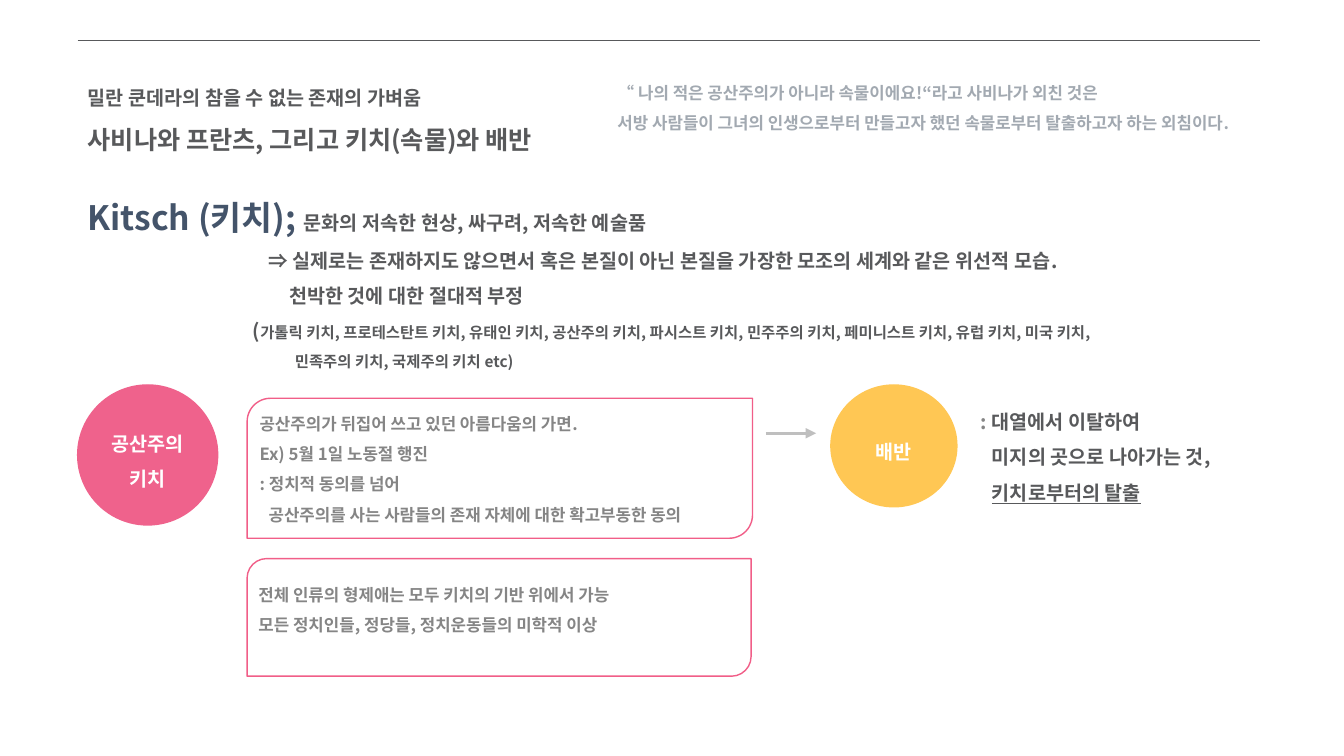
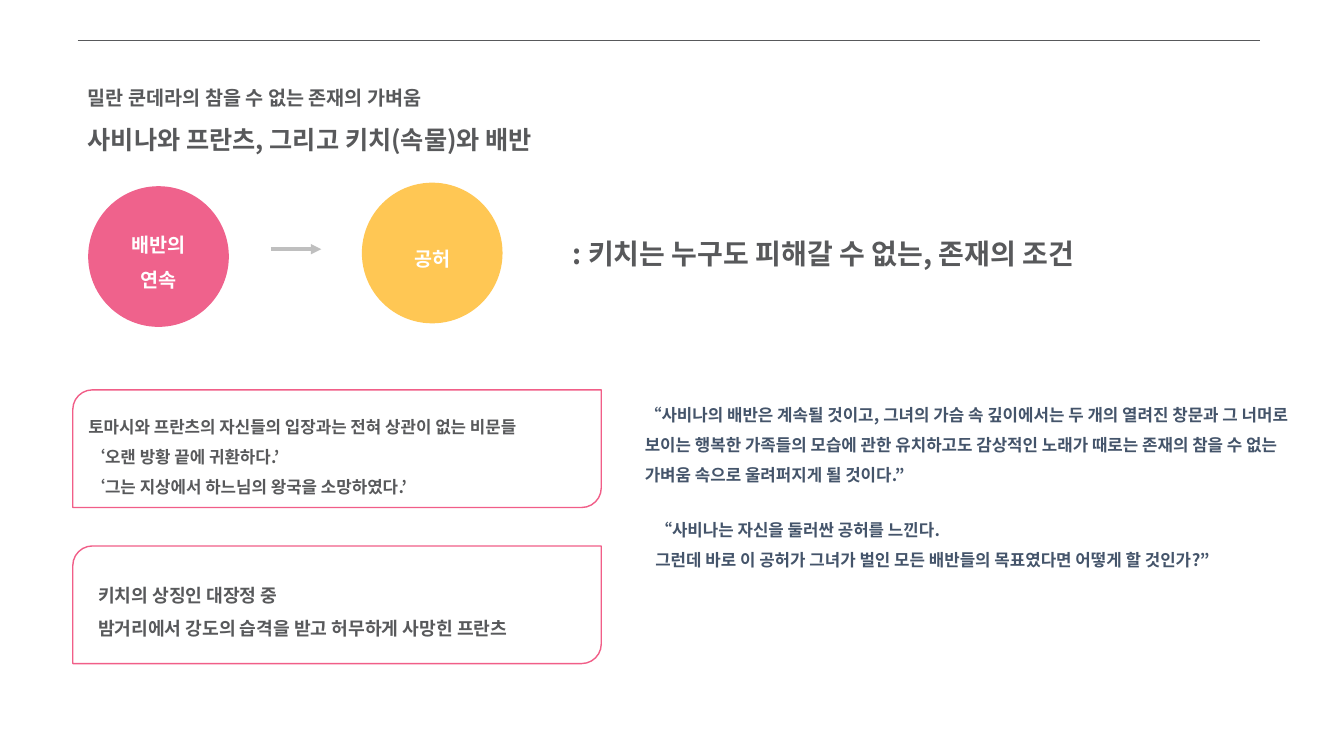
from dataclasses import dataclass

from lxml.etree import SubElement
from pptx import Presentation
from pptx.dml.color import RGBColor
from pptx.enum.shapes import MSO_CONNECTOR as CONN, MSO_SHAPE as SHAPE
from pptx.enum.text import MSO_ANCHOR as ANCHOR, MSO_AUTO_SIZE as AUTO, PP_ALIGN as ALIGN
from pptx.oxml.ns import qn
from pptx.util import Pt


@dataclass(frozen=True)
class Theme:
    font: str = "Noto Sans CJK KR"
    ink: str = "58595B"
    navy: str = "44546A"
    grey: str = "858585"
    pale: str = "A2A9B1"
    arrow: str = "BFBFBF"
    pink: str = "EF628C"
    outline: str = "F15E88"
    yellow: str = "FFC754"
    white: str = "FFFFFF"
    term: int = 24
    claim: int = 20
    title: int = 18
    body: int = 14
    panel: int = 13
    small: int = 12
    tiny: int = 11
    spacing: float = 1.5


T = Theme()

TITLE = [
    "밀란 쿤데라의 참을 수 없는 존재의 가벼움",
    (0, ("사비나와 프란츠, 그리고 키치(속물)와 배반", {"size": T.title})),
]

SLIDES = [
    {
        "texts": [
            ((55.5, 122.5, 888, 146), T.body, T.ink, [
                (0, ("Kitsch (키치); ", {"size": T.term, "color": T.navy}),
                 "문화의 저속한 현상, 싸구려, 저속한 예술품"),
                (129, "⇒ 실제로는 존재하지도 않으면서 혹은 본질이 아닌 본질을 가장한 모조의 세계와 같은 위선적 모습."),
                (144, "천박한 것에 대한 절대적 부정"),
                (118, "(",
                 ("가톨릭 키치, 프로테스탄트 키치, 유태인 키치, 공산주의 키치, 파시스트 키치, "
                  "민주주의 키치, 페미니스트 키치, 유럽 키치, 미국 키치,", {"size": T.tiny})),
                (148, ("민족주의 키치, 국제주의 키치 etc)", {"size": T.tiny})),
            ]),
            ((434, 48, 512, 51), T.small, T.pale, [
                "“ 나의 적은 공산주의가 아니라 속물이에요!“라고 사비나가 외친 것은",
                "서방 사람들이 그녀의 인생으로부터 만들고자 했던 속물로부터 탈출하고자 하는 외침이다.",
            ]),
            ((693.5, 281, 235, 101), T.body, T.ink, [
                (0, (": ", {"color": T.grey}), "대열에서 이탈하여"),
                (8, "미지의 곳으로 나아가는 것,"),
                (8, ("키치로부터의 탈출", {"underline": True})),
            ]),
        ],
        "circles": [
            ((55.5, 275, 100, 100), T.pink, "공산주의 키치"),
            ((593.5, 275, 90, 87), T.yellow, "배반"),
        ],
        "arrow": (547, 309.5),
        "panels": [
            ((176.5, 284.5, 361, 100), 4, -3, T.small, T.grey, [
                "공산주의가 뒤집어 쓰고 있던 아름다움의 가면.",
                "Ex) 5월 1일 노동절 행진",
                ": 정치적 동의를 넘어",
                (6.5, "공산주의를 사는 사람들의 존재 자체에 대한 확고부동한 동의"),
            ]),
            ((176.5, 399, 360, 84), 4, -9, T.small, T.grey, [
                "전체 인류의 형제애는 모두 키치의 기반 위에서 가능",
                "모든 정치인들, 정당들, 정치운동들의 미학적 이상",
            ]),
        ],
    },
    {
        "texts": [
            ((461, 360.5, 490, 51), T.small, T.navy, [
                "“사비나는 자신을 둘러싼 공허를 느낀다.",
                "그런데 바로 이 공허가 그녀가 벌인 모든 배반들의 목표였다면 어떻게 할 것인가?”",
            ]),
            ((402, 153.5, 418, 39), T.claim, T.ink, [
                ": 키치는 누구도 피해갈 수 없는, 존재의 조건",
            ]),
            ((453.5, 278, 477.5, 73), T.small, T.navy, [
                "“사비나의 배반은 계속될 것이고, 그녀의 가슴 속 깊이에서는 두 개의 열려진 창문과 "
                "그 너머로 보이는 행복한 가족들의 모습에 관한 유치하고도 감상적인 노래가 때로는 "
                "존재의 참을 수 없는 가벼움 속으로 울려퍼지게 될 것이다.”",
            ]),
        ],
        "circles": [
            ((63.5, 133.5, 99.5, 99.5), T.pink, "배반의 연속"),
            ((259, 131, 99.5, 99.5), T.yellow, "공허"),
        ],
        "arrow": (193.5, 178),
        "panels": [
            ((52, 278.5, 377.5, 84), 7, 2, T.small, T.ink, [
                "토마시와 프란츠의 자신들의 입장과는 전혀 상관이 없는 비문들",
                "‘오랜 방황 끝에 귀환하다.’",
                "‘그는 지상에서 하느님의 왕국을 소망하였다.’",
            ]),
            ((52, 390, 377.5, 84), 14, 1, T.panel, T.ink, [
                "키치의 상징인 대장정 중",
                "밤거리에서 강도의 습격을 받고 허무하게 사망힌 프란츠",
            ]),
        ],
    },
]


def rgb(value):
    return RGBColor.from_string(value)


def add_run(p, text, size, color, underline=None):
    r = p.add_run()
    r.text = text
    f = r.font
    f.name, f.size, f.bold, f.underline = T.font, Pt(size), True, underline
    f.color.rgb = rgb(color)
    SubElement(r._r.get_or_add_rPr(), qn("a:ea")).set("typeface", T.font)


def fill_text(tf, lines, size, color, align=ALIGN.LEFT, anchor=ANCHOR.TOP):
    tf.word_wrap = True
    tf.auto_size = AUTO.NONE
    tf.vertical_anchor = anchor
    for i, line in enumerate(lines):
        p = tf.add_paragraph() if i else tf.paragraphs[0]
        p.alignment, p.line_spacing = align, T.spacing
        p.space_before = Pt(0)
        indent, *runs = (0, line) if isinstance(line, str) else line
        pPr = p._p.get_or_add_pPr()
        pPr.set("marL", str(Pt(indent)))
        pPr.set("indent", "0")
        for run in runs:
            text, style = (run, {}) if isinstance(run, str) else run
            add_run(p, text, **{"size": size, "color": color, **style})


def add_title(s):
    sp = s.shapes.title
    sp.left, sp.top, sp.width, sp.height = map(Pt, (55.5, 49, 387.5, 61))
    fill_text(sp.text_frame, TITLE, T.body, T.ink)


def add_text(s, box, size, color, lines):
    sp = s.shapes.add_textbox(*map(Pt, box))
    fill_text(sp.text_frame, lines, size, color)


def add_shape(s, kind, box, fill, line):
    sp = s.shapes.add_shape(kind, *map(Pt, box))
    sp.shadow.inherit = False
    sp.fill.solid()
    sp.fill.fore_color.rgb = rgb(fill)
    sp.line.color.rgb = rgb(line)
    sp.line.width = Pt(1)
    return sp


def add_circle(s, box, color, label):
    sp = add_shape(s, SHAPE.OVAL, box, color, color)
    fill_text(sp.text_frame, [label], T.body, T.white, ALIGN.CENTER, ANCHOR.MIDDLE)


def add_panel(s, box, inset, shift, size, color, lines):
    sp = add_shape(s, SHAPE.ROUND_2_DIAG_RECTANGLE, box, T.white, T.outline)
    tf = sp.text_frame
    tf.margin_left, tf.margin_right = Pt(inset), Pt(0)
    tf.margin_top, tf.margin_bottom = Pt(max(2 * shift, 0)), Pt(max(-2 * shift, 0))
    fill_text(tf, lines, size, color, anchor=ANCHOR.MIDDLE)


def add_line(s, x, y, length, color, width, arrow=False):
    c = s.shapes.add_connector(CONN.STRAIGHT, Pt(x), Pt(y), Pt(x + length), Pt(y))
    c.line.color.rgb = rgb(color)
    c.line.width = Pt(width)
    if arrow:
        SubElement(c.line._get_or_add_ln(), qn("a:tailEnd")).set("type", "triangle")
    SubElement(c._element.spPr, qn("a:effectLst"))


def build_slide(prs, content):
    s = prs.slides.add_slide(prs.slide_layouts[5])
    add_line(s, 55.5, 29, 844.5, T.ink, 0.5)
    add_title(s)
    for text in content["texts"]:
        add_text(s, *text)
    for circle in content["circles"]:
        add_circle(s, *circle)
    for panel in content["panels"]:
        add_panel(s, *panel)
    add_line(s, *content["arrow"], 36, T.arrow, 2.5, arrow=True)


def main():
    prs = Presentation()
    prs.slide_width, prs.slide_height = Pt(960), Pt(540)
    for content in SLIDES:
        build_slide(prs, content)
    prs.save("out.pptx")


if __name__ == "__main__":
    main()
